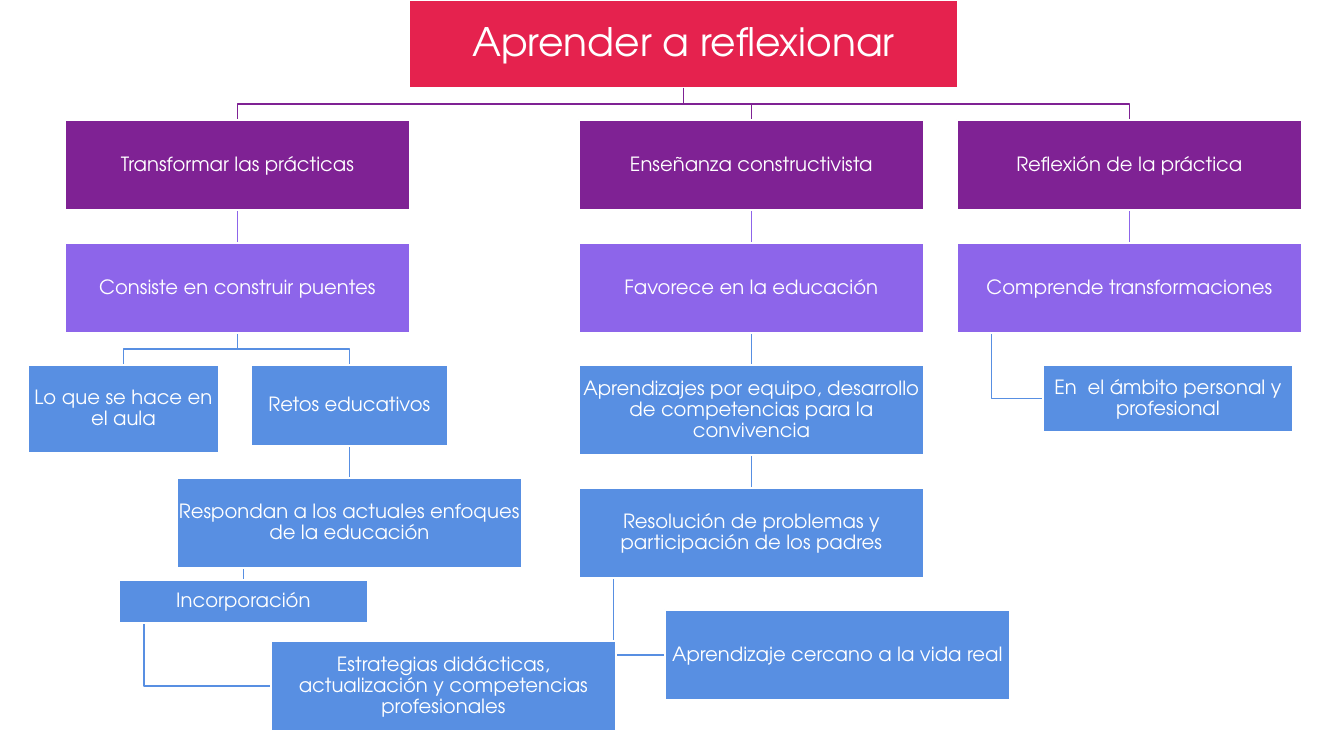
from lxml.etree import SubElement
from pptx import Presentation
from pptx.dml.color import RGBColor
from pptx.enum.shapes import MSO_CONNECTOR, MSO_SHAPE
from pptx.enum.text import MSO_ANCHOR, MSO_AUTO_SIZE, PP_ALIGN
from pptx.oxml.ns import qn
from pptx.util import Inches, Pt

PX = Inches(1) / 100.8
FONT = "TeX Gyre Adventor"
COLORS = {
    "title": "E5224E",
    "topic": "7F2294",
    "idea": "8D65EA",
    "detail": "588FE2",
    "white": "FFFFFF",
}
W, H = 345, 90
COLUMNS = [65, 579, 957]
ROWS = [120, 243, 365, 488, 610]

TITLE = ("Aprender a reflexionar", "title", (409, 0, 549, 88))
BOXES = {
    "practicas": ("Transformar las prácticas", "topic", (COLUMNS[0], ROWS[0], W, H)),
    "puentes": ("Consiste en construir puentes", "idea", (COLUMNS[0], ROWS[1], W, H)),
    "aula": ("Lo que se hace en el aula", "detail", (28, ROWS[2], 191, 88)),
    "retos": ("Retos educativos", "detail", (251, ROWS[2], 197, 81)),
    "enfoques": ("Respondan a los actuales enfoques de la educación", "detail", (177, 478, W, H)),
    "incorporacion": ("Incorporación", "detail", (119, 580, 249, 43)),
    "estrategias": ("Estrategias didácticas, actualización y competencias profesionales",
                    "detail", (271, 641, W, H)),
    "ensenanza": ("Enseñanza constructivista", "topic", (COLUMNS[1], ROWS[0], W, H)),
    "educacion": ("Favorece en la educación", "idea", (COLUMNS[1], ROWS[1], W, H)),
    "equipo": ("Aprendizajes por equipo, desarrollo de competencias para la convivencia",
               "detail", (COLUMNS[1], ROWS[2], W, H)),
    "problemas": ("Resolución de problemas y participación de los padres",
                  "detail", (COLUMNS[1], ROWS[3], W, H)),
    "vida": ("Aprendizaje cercano a la vida real", "detail", (665, ROWS[4], W, H)),
    "reflexion": ("Reflexión de la práctica", "topic", (COLUMNS[2], ROWS[0], W, H)),
    "transformaciones": ("Comprende transformaciones", "idea", (COLUMNS[2], ROWS[1], W, H)),
    "ambito": ("En  el ámbito personal y profesional", "detail", (1043, ROWS[2], 250, 67)),
}
LINKS = [
    ("transformaciones", "ambito", "side"),
    ("reflexion", "transformaciones", "middle"),
    ("title", "reflexion", "middle"),
    ("problemas", "vida", "side"),
    ("equipo", "problemas", "middle"),
    ("educacion", "equipo", "middle"),
    ("ensenanza", "educacion", "middle"),
    ("title", "ensenanza", "middle"),
    ("incorporacion", "estrategias", "side"),
    ("enfoques", "incorporacion", "edge"),
    ("retos", "enfoques", "middle"),
    ("puentes", "retos", "middle"),
    ("puentes", "aula", "middle"),
    ("practicas", "puentes", "middle"),
    ("title", "practicas", "middle"),
]


def emu(v):
    return round(v * PX)


def rgb(name):
    return RGBColor.from_string(COLORS[name])


def set_all(obj, values):
    for name, value in values.items():
        setattr(obj, name, value)


def set_line(sp, color):
    sp.line.color.rgb = rgb(color)
    sp.line.width = Pt(1)


def fill_box(sp, box, size=14, inset=1):
    text, color, rect = box
    set_all(sp, dict(zip(("left", "top", "width", "height"), map(emu, rect))))
    sp.fill.solid()
    sp.fill.fore_color.rgb = rgb(color)
    set_line(sp, "white")
    tf = sp.text_frame
    tf.text = text
    set_all(tf, {"word_wrap": True, "auto_size": MSO_AUTO_SIZE.NONE,
                 "vertical_anchor": MSO_ANCHOR.MIDDLE})
    set_all(tf, {f"margin_{side}": emu(inset) for side in ("left", "top", "right", "bottom")})
    p = tf.paragraphs[0]
    set_all(p, {"alignment": PP_ALIGN.CENTER, "line_spacing": 0.9})
    r = p.runs[0]
    set_all(r.font, {"name": FONT, "size": Pt(size), "bold": False})
    r.font.color.rgb = rgb("white")


def route(parent, child, kind):
    px, py, pw, ph = parent
    cx, cy, cw, ch = child
    bottom = py + ph
    if kind == "side":
        x, y = px + pw / 10, cy + ch / 2
        return [(x, bottom), (x, y), (cx, y)]
    start, end = px + pw / 2, cx + cw / 2
    if start == end:
        return [(start, bottom), (end, cy)]
    bend = bottom if kind == "edge" else (bottom + cy) / 2
    return [(start, bottom), (start, bend), (end, bend), (end, cy)]


def draw_link(shapes, points, color):
    points = [(emu(x), emu(y)) for x, y in points]
    if len(points) == 2:
        sp = shapes.add_connector(MSO_CONNECTOR.STRAIGHT, *points[0], *points[1])
        SubElement(sp._element.spPr, qn("a:effectLst"))
    else:
        builder = shapes.build_freeform(*points[0])
        builder.add_line_segments(points[1:], close=False)
        sp = builder.convert_to_shape()
        sp.fill.background()
        sp.shadow.inherit = False
    set_line(sp, color)


def main():
    prs = Presentation()
    prs.slide_width, prs.slide_height = emu(1344), emu(756)
    s = prs.slides.add_slide(prs.slide_layouts[5])
    fill_box(s.shapes.title, TITLE, size=28, inset=2)
    boxes = {"title": TITLE, **BOXES}
    for parent, child, kind in LINKS:
        draw_link(s.shapes, route(boxes[parent][2], boxes[child][2], kind), boxes[child][1])
    for box in BOXES.values():
        sp = s.shapes.add_shape(MSO_SHAPE.RECTANGLE, *map(emu, box[2]))
        sp.shadow.inherit = False
        fill_box(sp, box)
    prs.save("out.pptx")


if __name__ == "__main__":
    main()
